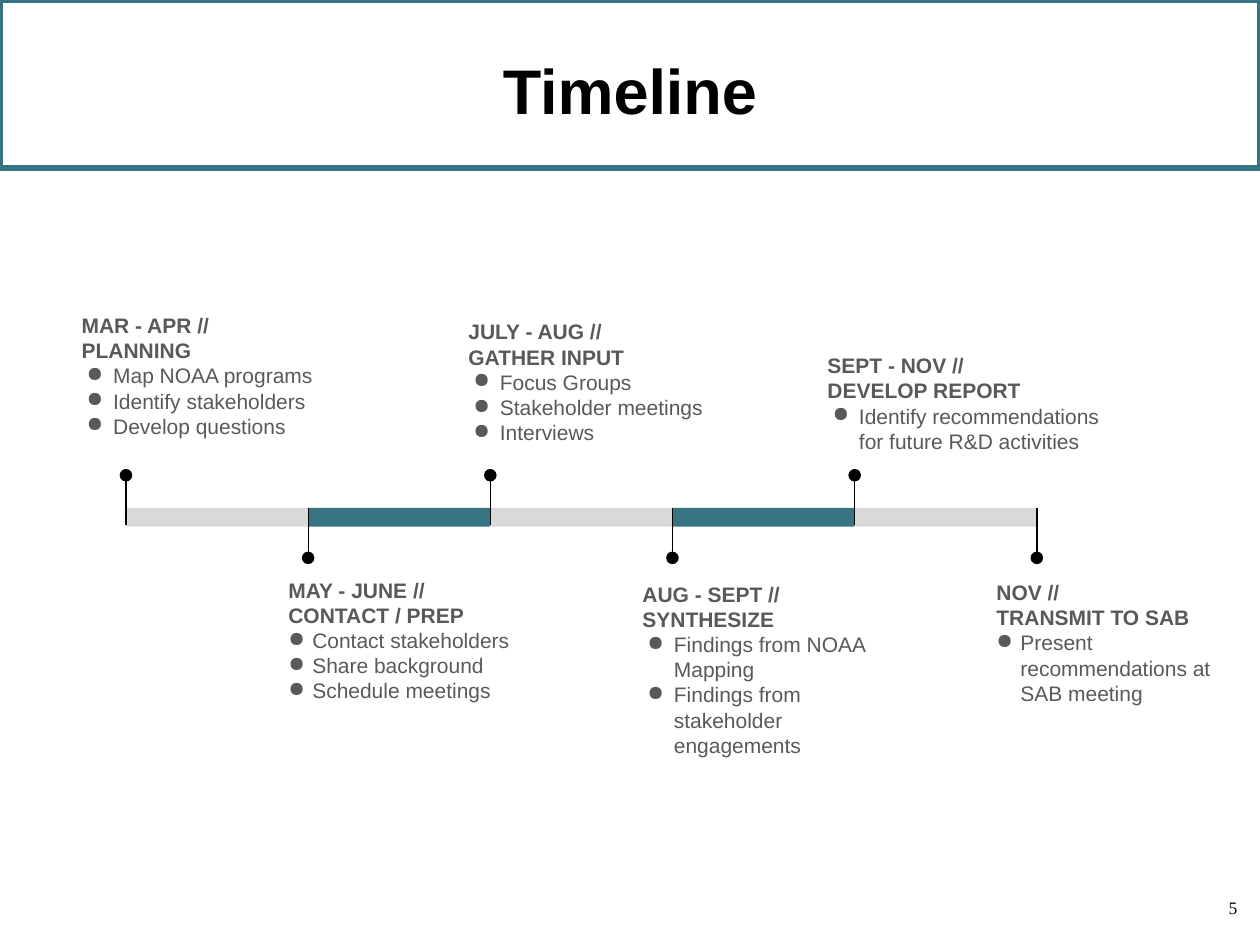
from dataclasses import dataclass

from lxml import etree
from pptx import Presentation
from pptx.dml.color import RGBColor
from pptx.enum import shapes, text
from pptx.oxml import ns
from pptx.util import Pt


@dataclass(frozen=True)
class Theme:
    teal: str = "367482"
    pale: str = "D9D9D9"
    black: str = "000000"
    gray: str = "595959"
    sans: str = "Arial"
    serif: str = "Times New Roman"
    title: int = 36
    body: int = 12
    small: int = 10


T = Theme()
LEFT, STEP, BAR, THICK = 72, 104.1, 290.2, 10.8
STEM, DOT = 28, 7.2

WIDE = (18, -15.1)
TIGHT = (13.7, -13.7)
TOP, LOW = text.MSO_ANCHOR.TOP, text.MSO_ANCHOR.BOTTOM

NOTES = [
    ((39.6, 177.8, 189.4, 80), LOW, WIDE, ["MAR - APR //\nPLANNING"],
     ["Map NOAA programs", "Identify stakeholders", "Develop questions"]),
    ((157.7, 322.6, 159.1, 156.2), TOP, TIGHT, ["MAY - JUNE //\nCONTACT / PREP"],
     ["Contact stakeholders", "Share background", "Schedule meetings"]),
    ((260.6, 132.5, 182.9, 128.9), LOW, WIDE, ["JULY - AUG //", "GATHER INPUT"],
     ["Focus Groups", "Stakeholder meetings", "Interviews"]),
    ((360, 324.9, 145.4, 100), TOP, WIDE, ["AUG - SEPT //\nSYNTHESIZE"],
     ["Findings from NOAA Mapping", "Findings from stakeholder engagements"]),
    ((465.8, 194.4, 175, 34.6), TOP, WIDE, ["SEPT - NOV //", "DEVELOP REPORT"],
     ["Identify recommendations for future R&D activities"]),
    ((562.3, 324, 145.4, 100), TOP, TIGHT, ["NOV //\nTRANSMIT TO SAB"],
     ["Present recommendations at SAB meeting"]),
]


def color(code):
    return RGBColor.from_string(code)


def add_box(slide, box, anchor, pad):
    frame = slide.shapes.add_textbox(*map(Pt, box)).text_frame
    frame.word_wrap = True
    frame.vertical_anchor = anchor
    frame.margin_left = frame.margin_right = Pt(7.2)
    frame.margin_top = frame.margin_bottom = Pt(pad)
    return frame


def add_text(para, words, size, tint, face=T.sans, bold=False):
    for i, line in enumerate(words.split("\n")):
        if i:
            para.add_line_break()
        run = para.add_run()
        run.text = line
        run.font.name = face
        run.font.size = Pt(size)
        run.font.bold = bold
        run.font.color.rgb = color(tint)


def add_label(slide, box, words, size, face, align, anchor, bold=False):
    para = add_box(slide, box, anchor, 3.6).paragraphs[0]
    para.alignment = align
    add_text(para, words, size, T.black, face, bold)


def add_bullet(para, indent):
    props = para._p.get_or_add_pPr()
    props.set("marL", str(Pt(indent[0])))
    props.set("indent", str(Pt(indent[1])))
    tint = etree.SubElement(props, ns.qn("a:buClr"))
    etree.SubElement(tint, ns.qn("a:srgbClr"), val=T.gray)
    etree.SubElement(props, ns.qn("a:buChar"), char="●")


def add_note(slide, box, anchor, indent, heads, items):
    frame = add_box(slide, box, anchor, 7.2)
    for i, words in enumerate(heads + items):
        para = frame.add_paragraph() if i else frame.paragraphs[0]
        head = i < len(heads)
        if not head:
            add_bullet(para, indent)
        add_text(para, words, T.body, T.gray, bold=head)


def add_form(slide, kind, box, fill):
    form = slide.shapes.add_shape(kind, *map(Pt, box))
    form.shadow.inherit = False
    form.fill.solid()
    form.fill.fore_color.rgb = color(fill)
    form.line.fill.background()


def add_frame(slide):
    form = slide.shapes.add_shape(
        shapes.MSO_SHAPE.RECTANGLE, 0, 0, Pt(720), Pt(96))
    form.shadow.inherit = False
    form.fill.background()
    form.line.color.rgb = color(T.teal)
    form.line.width = Pt(3)


def add_pin(slide, x, up):
    tip, end = BAR - 18, BAR + THICK - 0.8
    if not up:
        tip, end = BAR + STEM, BAR
    stem = slide.shapes.add_connector(
        shapes.MSO_CONNECTOR.STRAIGHT, Pt(x), Pt(tip), Pt(x), Pt(end))
    stem.line.color.rgb = color(T.black)
    stem.line.width = Pt(0.75)
    etree.SubElement(stem._element.spPr, ns.qn("a:effectLst"))
    y = tip - 4.2 if up else tip - 3
    add_form(slide, shapes.MSO_SHAPE.OVAL, (x - DOT / 2, y, DOT, DOT), T.black)


def main():
    deck = Presentation()
    deck.slide_width, deck.slide_height = Pt(720), Pt(540)
    slide = deck.slides.add_slide(deck.slide_layouts[6])
    add_frame(slide)
    add_label(slide, (92.9, 0, 534.2, 102.2), "Timeline", T.title, T.sans,
              text.PP_ALIGN.CENTER, text.MSO_ANCHOR.MIDDLE, True)
    add_label(slide, (678.2, 509, 36, 25.2), "5", T.small, T.serif,
              text.PP_ALIGN.RIGHT, TOP)
    spots = [LEFT + i * STEP for i in range(len(NOTES))]
    for i, x in enumerate(spots[:-1]):
        add_form(slide, shapes.MSO_SHAPE.RECTANGLE, (x, BAR, STEP, THICK),
                 T.teal if i % 2 else T.pale)
    for i, (x, note) in enumerate(zip(spots, NOTES)):
        add_pin(slide, x, i % 2 == 0)
        add_note(slide, *note)
    deck.save("out.pptx")


if __name__ == "__main__":
    main()
